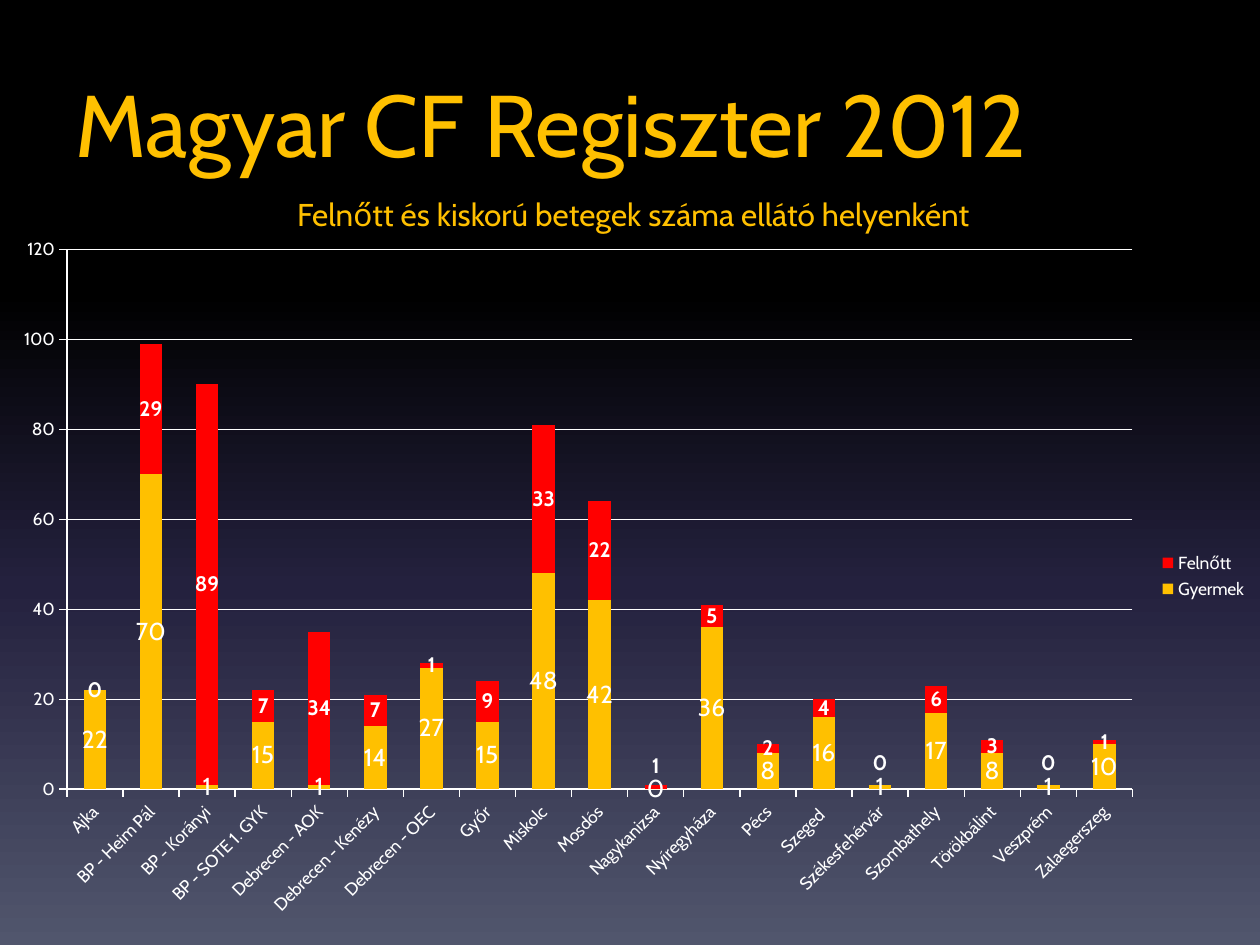
from lxml.etree import SubElement
from pptx import Presentation
from pptx.chart.data import CategoryChartData
from pptx.dml.color import RGBColor
from pptx.enum.chart import XL_CHART_TYPE, XL_LABEL_POSITION, XL_LEGEND_POSITION, XL_TICK_MARK
from pptx.enum.text import MSO_ANCHOR
from pptx.oxml import parse_xml
from pptx.oxml.ns import nsdecls, qn
from pptx.util import Inches, Pt

WIDTH, HEIGHT = Inches(10), Inches(7.5)
FONT, GOLD, RED, WHITE = "Cabin", "FFC000", "FF0000", "FFFFFF"
BACKDROP = [(0, "000000"), (31, "000000"), (62, "24213E"), (100, "51566D")]
PLOT_SHARES = {"x": 0.054, "y": 0.036, "w": 0.845, "h": 0.767}
LABEL_LIFT = {"x": 0, "y": -0.03}
PATIENTS = [
    ("Ajka", 22, 0), ("BP - Heim Pál", 70, 29), ("BP - Korányi", 1, 89),
    ("BP - SOTE 1. GYK", 15, 7), ("Debrecen - AOK", 1, 34),
    ("Debrecen - Kenézy", 14, 7), ("Debrecen - OEC", 27, 1), ("Győr", 15, 9),
    ("Miskolc", 48, 33), ("Mosdós", 42, 22), ("Nagykanizsa", 0, 1),
    ("Nyíregyháza", 36, 5), ("Pécs", 8, 2), ("Szeged ", 16, 4),
    ("Székesfehérvár", 1, 0), ("Szombathely", 17, 6), ("Törökbálint", 8, 3),
    ("Veszprém", 1, 0), ("Zalaegerszeg", 10, 1),
]
GROUPS = {
    "Gyermek": (GOLD, {"size": Pt(14), "bold": False}),
    "Felnőtt": (RED, {"size": Pt(12), "bold": True}),
}


def rgb(value):
    """Turn a hex string into a colour."""
    return RGBColor.from_string(value)


def apply(target, formats):
    """Set each named attribute on the target."""
    for name, value in formats.items():
        setattr(target, name, value)


def style_font(font, color, **formats):
    """Give a font the deck typeface, a colour and further formats."""
    apply(font, {"name": FONT, **formats})
    font.color.rgb = rgb(color)


def place(box):
    """Turn shares of the slide into left, top, width and height."""
    return [int(share * side) for share, side in zip(box, (WIDTH, HEIGHT) * 2)]


def manual_layout(shares, settings=""):
    """Make a chart layout element from shares of the chart."""
    values = "".join(f'<c:{side} val="{share}"/>' for side, share in shares.items())
    return parse_xml(f'<c:layout {nsdecls("c")}><c:manualLayout>{settings}{values}'
                     "</c:manualLayout></c:layout>")


def paint_background(slide):
    """Fill the slide with the vertical night gradient."""
    fill = slide.background.fill
    fill.gradient()
    fill.gradient_angle = 270
    stops = slide.background._cSld.find(".//" + qn("a:gsLst"))
    for stop in list(stops):
        stops.remove(stop)
    for share, color in BACKDROP:
        stop = SubElement(stops, qn("a:gs"), pos=str(share * 1000))
        SubElement(stop, qn("a:srgbClr"), val=color)


def add_heading(slide, box, wording, size):
    """Write one gold line at the top left of the box."""
    frame = slide.shapes.add_textbox(*place(box)).text_frame
    apply(frame, {"word_wrap": True, "vertical_anchor": MSO_ANCHOR.TOP})
    heading = frame.paragraphs[0].add_run()
    heading.text = wording
    style_font(heading.font, GOLD, size=Pt(size))


def style_axes(chart):
    """Draw white axes, gridlines and slanted place names."""
    places, counts = chart.category_axis, chart.value_axis
    apply(counts, {"minimum_scale": 0, "maximum_scale": 120, "major_unit": 20,
                   "has_major_gridlines": True})
    for axis in (places, counts):
        axis.major_tick_mark = XL_TICK_MARK.OUTSIDE
        style_font(axis.tick_labels.font, WHITE, size=Pt(10))
    for line in (places.format.line, counts.format.line, counts.major_gridlines.format.line):
        line.color.rgb = rgb(WHITE)
        line.width = Pt(0.75)
    places._element.find(qn("c:txPr")).find(qn("a:bodyPr")).set("rot", "-2700000")


def style_series(plot):
    """Colour each patient group and label its columns."""
    apply(plot, {"gap_width": 150, "overlap": 100, "vary_by_categories": False})
    for group in plot.series:
        color, label_formats = GROUPS[group.name]
        group.format.fill.solid()
        group.format.fill.fore_color.rgb = rgb(color)
        labels = group.data_labels
        apply(labels, {"show_value": True, "position": XL_LABEL_POSITION.CENTER})
        style_font(labels.font, WHITE, **label_formats)


def lift_adult_labels(adults):
    """Raise the adult label clear of the child label on near-empty columns."""
    for index, (_, *counts) in enumerate(PATIENTS):
        if sum(counts) <= 1:
            label = adults.points[index].data_label
            style_font(label.font, WHITE, **GROUPS[adults.name][1])
            label.position = XL_LABEL_POSITION.CENTER
    for label in adults.data_labels._element.findall(qn("c:dLbl")):
        label.insert(1, manual_layout(LABEL_LIFT))


def fix_plot_area(chart):
    """Hold the inner plot at its shares of the chart."""
    area = chart._chartSpace.find(".//" + qn("c:plotArea"))
    for layout in area.findall(qn("c:layout")):
        area.remove(layout)
    modes = "".join(f'<c:{side}Mode val="edge"/>' for side in "xy")
    area.insert(0, manual_layout(PLOT_SHARES, f'<c:layoutTarget val="inner"/>{modes}'))


def add_patient_chart(slide, box):
    """Stack child and adult patients for each place of care."""
    names, *counts = zip(*PATIENTS)
    data = CategoryChartData()
    data.categories = names
    for group, values in zip(GROUPS, counts):
        data.add_series(group, values)
    chart = slide.shapes.add_chart(XL_CHART_TYPE.COLUMN_STACKED, *place(box), data).chart
    apply(chart, {"has_title": False, "has_legend": True})
    style_font(chart.font, WHITE, size=Pt(10))
    apply(chart.legend, {"position": XL_LEGEND_POSITION.RIGHT, "include_in_layout": False})
    style_font(chart.legend.font, WHITE, size=Pt(10))
    style_axes(chart)
    style_series(chart.plots[0])
    lift_adult_labels(chart.plots[0].series[1])
    fix_plot_area(chart)


def main():
    """Build the register slide and save it."""
    deck = Presentation()
    apply(deck, {"slide_width": WIDTH, "slide_height": HEIGHT})
    slide = deck.slides.add_slide(deck.slide_layouts[6])
    paint_background(slide)
    add_heading(slide, (0.05, 0.067, 0.9, 0.167), "Magyar CF Regiszter 2012", 50)
    add_heading(slide, (0.226, 0.2, 0.62, 0.053),
                "Felnőtt és kiskorú betegek száma ellátó helyenként", 18)
    add_patient_chart(slide, (-0.001, 0.237, 1.001, 0.745))
    deck.save("out.pptx")


if __name__ == "__main__":
    main()
